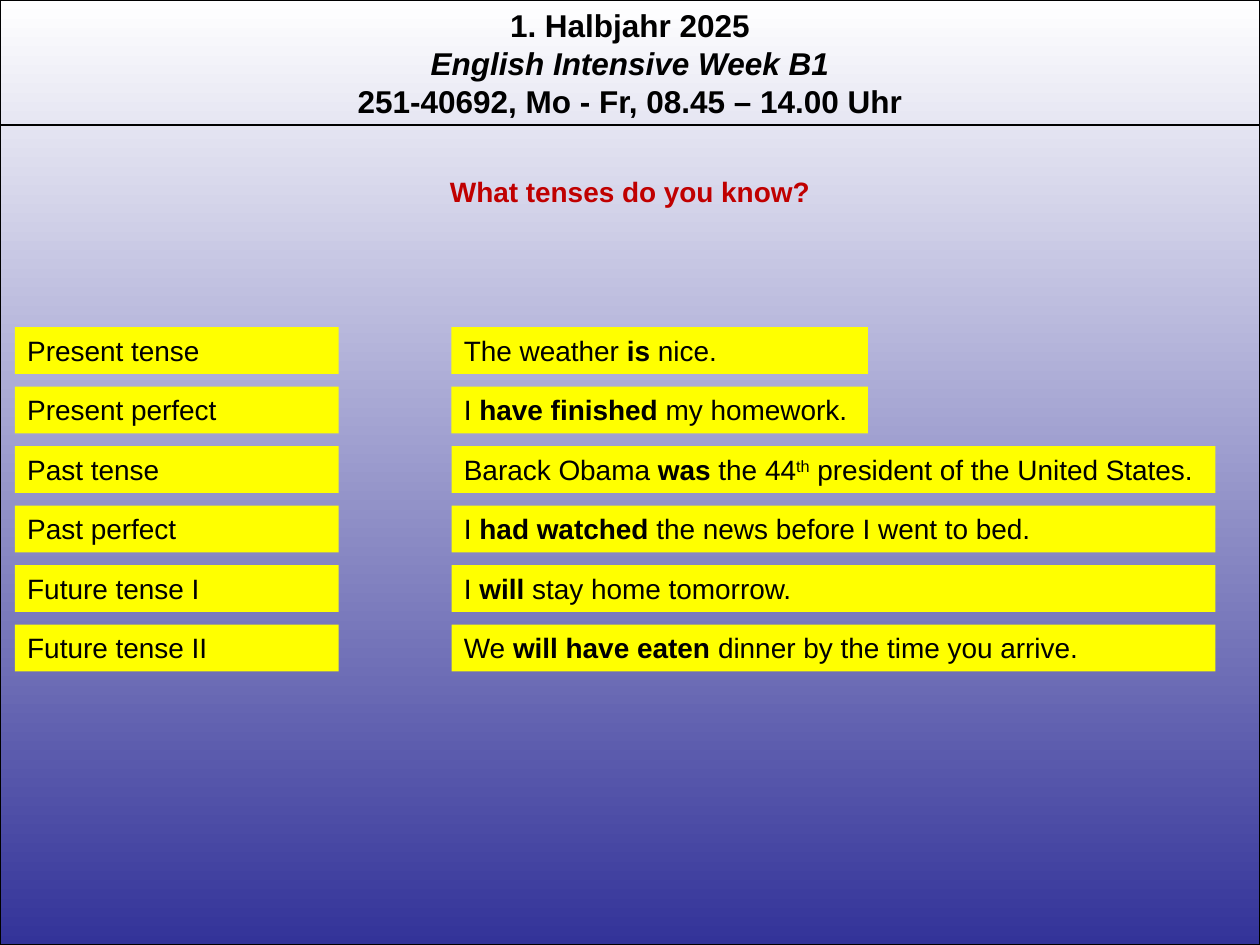
from lxml import etree
from pptx import Presentation
from pptx.dml.color import RGBColor
from pptx.enum.shapes import MSO_CONNECTOR, MSO_SHAPE
from pptx.enum.text import MSO_ANCHOR, MSO_AUTO_SIZE, PP_ALIGN
from pptx.oxml.ns import qn
from pptx.util import Pt

RECTANGLE = MSO_SHAPE.RECTANGLE
STRAIGHT = MSO_CONNECTOR.STRAIGHT
TOP = MSO_ANCHOR.TOP
GROW = MSO_AUTO_SIZE.SHAPE_TO_FIT_TEXT
LEFT, CENTER = PP_ALIGN.LEFT, PP_ALIGN.CENTER

COLORS = {"black": "000000", "white": "FFFFFF", "navy": "333399",
          "red": "C00000", "yellow": "FFFF00"}
FONT = "Arial"
WIDTH, HEIGHT = 720, 540
FIRST_ROW, ROW_STEP, CARD_HEIGHT = 187, 34, 26.65
TENSE_LEFT, TENSE_WIDTH = 8.5, 185
EXAMPLE_LEFT, SHORT_WIDTH, LONG_WIDTH = 258, 238, 436.5

HEADER = [[("1. Halbjahr 2025", "bold")],
          [("English Intensive Week B1", "bold italic")],
          [("251-40692, Mo - Fr, 08.45 – 14.00 Uhr", "bold")]]
QUESTION = [[("What tenses do you know?", "bold")]]
TENSES = [
    ("Present tense", SHORT_WIDTH,
     [("The weather ", ""), ("is", "bold"), (" nice.", "")]),
    ("Present perfect", SHORT_WIDTH,
     [("I ", ""), ("have finished ", "bold"), ("my homework.", "")]),
    ("Past tense", LONG_WIDTH,
     [("Barack Obama ", ""), ("was", "bold"), (" the 44", ""),
      ("th", "superscript"), (" president of the United States.", "")]),
    ("Past perfect", LONG_WIDTH,
     [("I ", ""), ("had watched ", "bold"),
      ("the news before I went to bed.", "")]),
    ("Future tense I", LONG_WIDTH,
     [("I ", ""), ("will ", "bold"), ("stay home tomorrow.", "")]),
    ("Future tense II", LONG_WIDTH,
     [("We ", ""), ("will have eaten ", "bold"),
      ("dinner by the time you arrive.", "")]),
]


def color(name):
    return RGBColor.from_string(COLORS[name])


def add_background(slide):
    shape = slide.shapes.add_shape(RECTANGLE, 0, 0, Pt(WIDTH), Pt(HEIGHT))
    shape.shadow.inherit = False
    shape.fill.gradient()
    shape.fill.gradient_angle = 270
    for stop, name in zip(shape.fill.gradient_stops, ("white", "navy")):
        stop.color.rgb = color(name)
    shape.line.color.rgb = color("black")
    shape.line.width = Pt(0.75)


def add_rule(slide, top):
    connector = slide.shapes.add_connector(STRAIGHT, 0, Pt(top), Pt(WIDTH), Pt(top))
    connector.line.color.rgb = color("black")
    connector.line.width = Pt(0.75)
    etree.SubElement(connector._element.spPr, qn("a:effectLst"))


def write_text(shape, lines, size, color_name, alignment):
    text_frame = shape.text_frame
    text_frame.word_wrap = True
    text_frame.auto_size = GROW
    text_frame.vertical_anchor = TOP
    for index, pieces in enumerate(lines):
        paragraph = text_frame.add_paragraph() if index else text_frame.paragraphs[0]
        paragraph.alignment = alignment
        for text, style in pieces:
            run = paragraph.add_run()
            run.text = text
            run.font.name = FONT
            run.font.size = Pt(size)
            run.font.color.rgb = color(color_name)
            run.font.bold = "bold" in style
            run.font.italic = "italic" in style
            if style == "superscript":
                run._r.get_or_add_rPr().set("baseline", "30000")


def add_heading(slide, top, height, lines, size, color_name):
    shape = slide.shapes.add_textbox(0, Pt(top), Pt(WIDTH), Pt(height))
    write_text(shape, lines, size, color_name, CENTER)


def add_card(slide, left, top, width, pieces):
    shape = slide.shapes.add_shape(RECTANGLE, Pt(left), Pt(top), Pt(width), Pt(CARD_HEIGHT))
    shape.shadow.inherit = False
    shape.fill.solid()
    shape.fill.fore_color.rgb = color("yellow")
    shape.line.fill.background()
    write_text(shape, [pieces], 16, "black", LEFT)


def main():
    presentation = Presentation()
    presentation.slide_width = Pt(WIDTH)
    presentation.slide_height = Pt(HEIGHT)
    slide = presentation.slides.add_slide(presentation.slide_layouts[6])
    add_background(slide)
    add_heading(slide, 0, 72.7, HEADER, 18, "black")
    add_rule(slide, 71.5)
    add_heading(slide, 96, CARD_HEIGHT, QUESTION, 16, "red")
    for row, (tense, width, example) in enumerate(TENSES):
        top = FIRST_ROW + row * ROW_STEP
        add_card(slide, TENSE_LEFT, top, TENSE_WIDTH, [(tense, "")])
        add_card(slide, EXAMPLE_LEFT, top, width, example)
    presentation.save("out.pptx")


if __name__ == "__main__":
    main()
